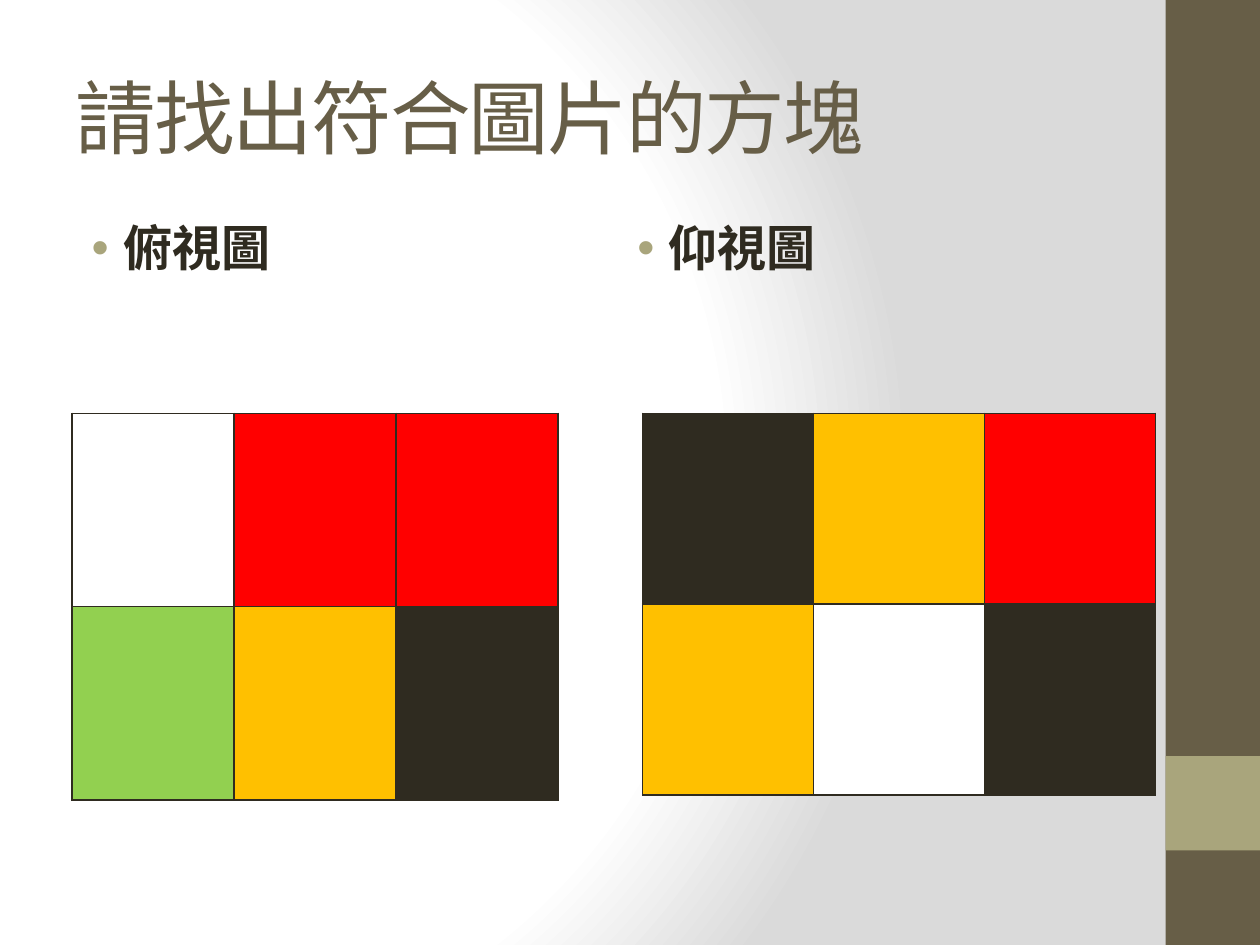
from dataclasses import dataclass

from lxml.etree import SubElement
from pptx import Presentation
from pptx.dml.color import RGBColor
from pptx.enum.shapes import MSO_SHAPE
from pptx.enum.text import MSO_ANCHOR
from pptx.oxml import parse_xml
from pptx.oxml.ns import nsdecls, qn
from pptx.slide import Slide
from pptx.text.text import _Run
from pptx.util import Inches, Pt

WHITE = RGBColor(0xFF, 0xFF, 0xFF)
GREY = RGBColor(0xDA, 0xDA, 0xDA)
BROWN = RGBColor(0x67, 0x5E, 0x47)
SAGE = RGBColor(0xA9, 0xA5, 0x7C)
DARK = RGBColor(0x2F, 0x2B, 0x20)
RED = RGBColor(0xFF, 0x00, 0x00)
GREEN = RGBColor(0x92, 0xD0, 0x50)
GOLD = RGBColor(0xFF, 0xC0, 0x00)


@dataclass
class Box:
    left: float
    top: float
    width: float
    height: float

    def emu(self) -> list[int]:
        return [Inches(n) for n in (self.left, self.top, self.width, self.height)]


@dataclass
class View:
    label: str
    text_box: Box
    grid_box: Box
    tiles: list[list[RGBColor]]


VIEWS = [
    View("俯視圖", Box(0.5, 1.68, 4, 5.02), Box(0.57, 3.28, 3.86, 3.07),
         [[WHITE, RED, RED], [GREEN, GOLD, DARK]]),
    View("仰視圖", Box(4.83, 1.68, 4, 5.02), Box(5.1, 3.28, 4.07, 3.03),
         [[DARK, GOLD, RED], [GOLD, WHITE, DARK]]),
]


def paint_back(slide: Slide) -> None:
    """Fill the background with a round gradient."""
    fill = slide.background.fill
    fill.gradient()
    stops = "".join(
        f'<a:gs pos="{pos * 1000}"><a:srgbClr val="{tone}"/></a:gs>'
        for pos, tone in ((0, WHITE), (75, WHITE), (100, GREY)))
    grad = parse_xml(
        f'<a:gradFill {nsdecls("a")} rotWithShape="1"><a:gsLst>{stops}</a:gsLst>'
        '<a:path path="circle"><a:fillToRect l="20000" t="50000" r="100000" b="50000"/>'
        '</a:path></a:gradFill>')
    old = slide.background._cSld.find(".//" + qn("a:gradFill"))
    old.getparent().replace(old, grad)


def add_bar(slide: Slide, box: Box, tone: RGBColor) -> None:
    bar = slide.shapes.add_shape(MSO_SHAPE.RECTANGLE, *box.emu())
    bar.shadow.inherit = False
    bar.fill.solid()
    bar.fill.fore_color.rgb = tone
    bar.line.fill.background()


def add_text(slide: Slide, box: Box, text: str, face: str, size: float,
             tone: RGBColor, anchor: MSO_ANCHOR, bold: bool = False) -> _Run:
    frame = slide.shapes.add_textbox(*box.emu()).text_frame
    frame.word_wrap = True
    frame.vertical_anchor = anchor
    run = frame.paragraphs[0].add_run()
    run.text = text
    font = run.font
    font.name, font.size, font.bold = face, Pt(size), bold
    font.color.rgb = tone
    return run


def add_label(slide: Slide, view: View) -> None:
    """Add the bulleted name of a view."""
    run = add_text(slide, view.text_box, view.label, "Calibri", 28, DARK,
                   MSO_ANCHOR.TOP, bold=True)
    props = run._r.getparent().get_or_add_pPr()
    props.set("marL", str(Inches(0.38)))
    props.set("indent", str(Inches(-0.25)))
    space = SubElement(props, qn("a:spcBef"))
    SubElement(space, qn("a:spcPct"), val="20000")
    tint = SubElement(props, qn("a:buClr"))
    SubElement(tint, qn("a:srgbClr"), val=str(SAGE))
    SubElement(props, qn("a:buFont"), typeface="Arial")
    SubElement(props, qn("a:buChar"), char="•")


def add_grid(slide: Slide, view: View) -> None:
    """Add the coloured tiles of a view as a table."""
    tiles = view.tiles
    grid = slide.shapes.add_table(
        len(tiles), len(tiles[0]), *view.grid_box.emu()).table
    grid.first_row = grid.horz_banding = False
    for y, row in enumerate(tiles):
        for x, tone in enumerate(row):
            cell = grid.cell(y, x)
            cell.fill.solid()
            cell.fill.fore_color.rgb = tone
            props = cell._tc.get_or_add_tcPr()
            for spot, side in enumerate("LRTB"):
                props.insert(spot, parse_xml(
                    f'<a:ln{side} {nsdecls("a")} w="{Pt(1)}"><a:solidFill>'
                    f'<a:srgbClr val="{DARK}"/></a:solidFill></a:ln{side}>'))


def main() -> None:
    deck = Presentation()
    deck.slide_width, deck.slide_height = Inches(10), Inches(7.5)
    slide = deck.slides.add_slide(deck.slide_layouts[6])

    # Background and side bar
    paint_back(slide)
    add_bar(slide, Box(9.25, 0, 0.75, 7.5), BROWN)
    add_bar(slide, Box(9.25, 6, 0.75, 0.75), SAGE)

    # Title
    title = add_text(slide, Box(0.5, 0.3, 8.33, 1.25), "請找出符合圖片的方塊",
                     "Cambria", 46, BROWN, MSO_ANCHOR.MIDDLE)
    title.font._element.set("spc", "-100")

    # Two views of the blocks
    for view in VIEWS:
        add_label(slide, view)
        add_grid(slide, view)

    deck.save("out.pptx")


if __name__ == "__main__":
    main()
